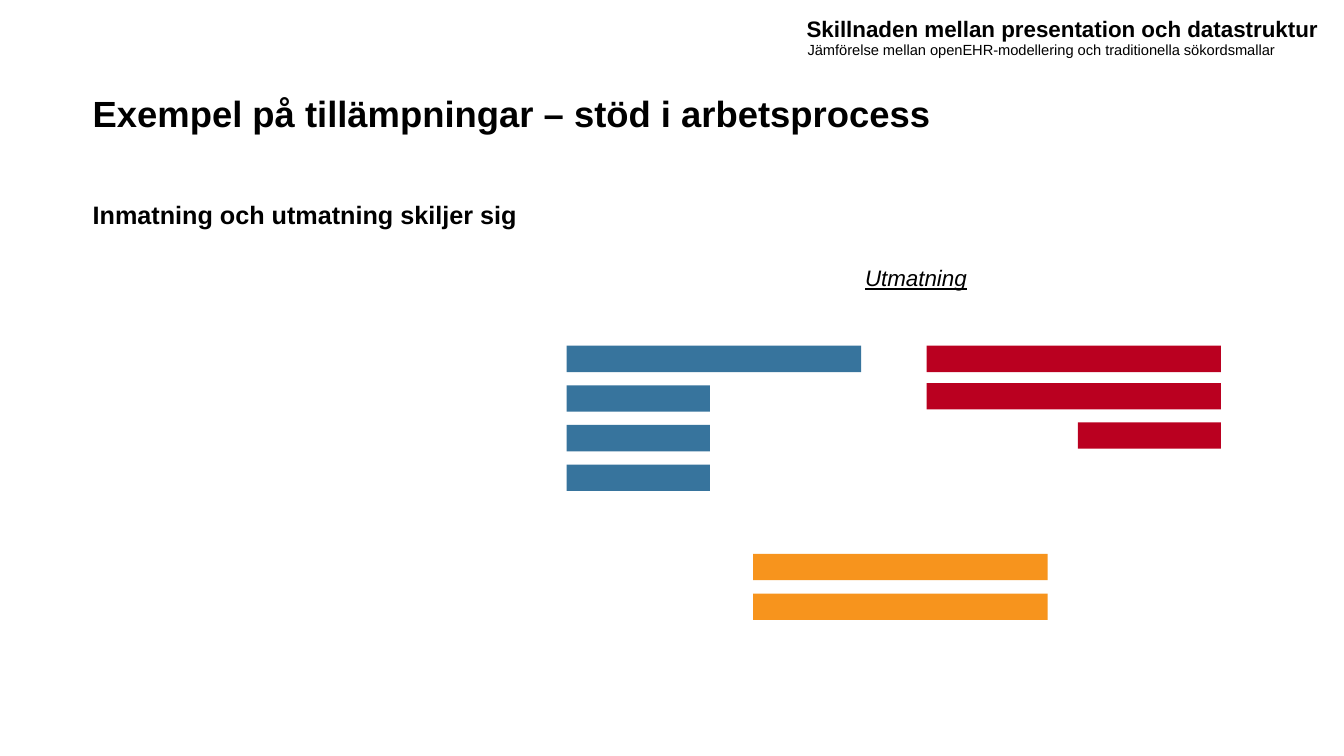
from pptx import Presentation
from pptx.dml.color import RGBColor
from pptx.enum.shapes import MSO_SHAPE
from pptx.enum.text import MSO_ANCHOR
from pptx.util import Inches, Pt

COLORS = {"text": "000000", "blue": "37749D", "red": "BA0020", "orange": "F7941D"}


def write(tf, text, size, font="Arial", color="text", bold=False, italic=False, underline=False):
    p = tf.paragraphs[0]
    r = p.add_run()
    r.text = text
    r.font.name = font
    r.font.size = Pt(size)
    r.font.bold = bold
    r.font.italic = italic
    r.font.underline = underline
    r.font.color.rgb = RGBColor.from_string(COLORS[color])


class Deck:
    """Draws styled elements on a slide grid of 133.3 columns by 75 rows."""

    COLS, ROWS = 133.3, 75
    BAR_HEIGHT, BAR_PITCH = 2.62, 3.93
    LONG, SHORT = 29.2, 14.2

    def __init__(self):
        self.prs = Presentation()
        self.prs.slide_width, self.prs.slide_height = Inches(13.33), Inches(7.5)
        self.s = self.prs.slides.add_slide(self.prs.slide_layouts[6])

    def place(self, col, row, cols, rows):
        x, y = self.prs.slide_width / self.COLS, self.prs.slide_height / self.ROWS
        return [round(v) for v in (col * x, row * y, cols * x, rows * y)]

    def text(self, box, text, size, anchor=MSO_ANCHOR.TOP, **style):
        sp = self.s.shapes.add_textbox(*self.place(*box))
        tf = sp.text_frame
        tf.word_wrap = True
        tf.vertical_anchor = anchor
        tf.margin_left = tf.margin_top = tf.margin_right = tf.margin_bottom = 0
        write(tf, text, size, **style)

    def bar(self, col, row, cols, color):
        box = self.place(col, row, cols, self.BAR_HEIGHT)
        sp = self.s.shapes.add_shape(MSO_SHAPE.RECTANGLE, *box)
        sp.shadow.inherit = False
        sp.fill.solid()
        sp.fill.fore_color.rgb = RGBColor.from_string(COLORS[color])
        sp.line.fill.background()

    def bars(self, col, row, lengths, color):
        for i, cols in enumerate(lengths):
            self.bar(col, row + i * self.BAR_PITCH, cols, color)


def main():
    deck = Deck()
    long, short = deck.LONG, deck.SHORT

    deck.text((9.2, 4, 115, 14.5), "Exempel på tillämpningar – stöd i arbetsprocess", 26,
              anchor=MSO_ANCHOR.MIDDLE, bold=True)
    deck.text((9.2, 19.8, 115, 44.4), "Inmatning och utmatning skiljer sig", 18, bold=True)
    deck.text((80, 0.3, 53.3, 5.1), "Skillnaden mellan presentation och datastruktur", 16,
              anchor=MSO_ANCHOR.MIDDLE, bold=True)
    deck.text((80.1, 4, 50.4, 2.8),
              "Jämförelse mellan openEHR-modellering och traditionella sökordsmallar", 10.5)
    deck.text((85.8, 26.2, 10.6, 3.9), "Utmatning", 16, italic=True, underline=True)

    deck.bars(56.2, 34.3, [long, short, short, short], "blue")
    deck.bars(74.7, 54.95, [long, long], "orange")
    for row, cols in ((34.3, long), (38, long), (41.9, short)):
        deck.bar(121.1 - cols, row, cols, "red")

    deck.prs.save("out.pptx")


if __name__ == "__main__":
    main()
